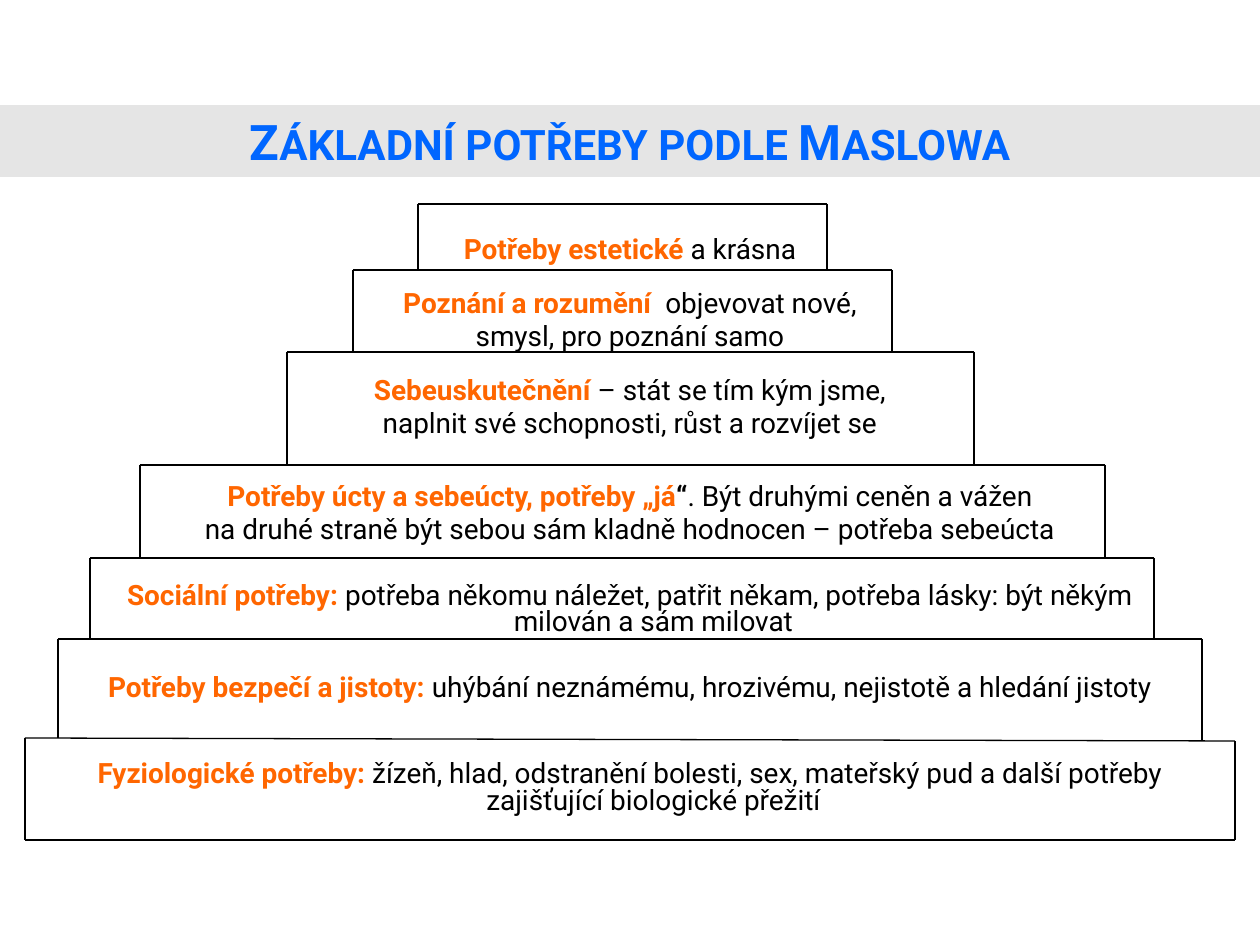
from dataclasses import dataclass

from lxml import etree
from pptx import Presentation
from pptx.dml.color import RGBColor
from pptx.enum.shapes import MSO_CONNECTOR, MSO_SHAPE
from pptx.enum.text import MSO_ANCHOR, PP_ALIGN
from pptx.oxml.ns import qn
from pptx.util import Pt

STRAIGHT = MSO_CONNECTOR.STRAIGHT
RECTANGLE = MSO_SHAPE.RECTANGLE
MIDDLE = MSO_ANCHOR.MIDDLE
TOP = MSO_ANCHOR.TOP
CENTER = PP_ALIGN.CENTER
EMU_PER_PX = 914400 / 126


@dataclass(frozen=True)
class Theme:
    font: str = "Roboto"
    ink: str = "000000"
    need: str = "FF6600"
    title: str = "0066FF"
    band: str = "E5E5E5"
    body_size: int = 16
    capital_size: int = 28
    small_capital_size: int = 24
    line_width: float = 0.75
    line_spacing: float = 0.8
    row_gap: float = 3.5


@dataclass(frozen=True)
class Span:
    text: str
    color: str
    size: int
    bold: bool = False


@dataclass(frozen=True)
class Step:
    """One step of the pyramid: its top edge, text rows and the gap above them in points."""
    left: int
    right: int
    top_left: int
    top_right: int
    gap: float
    rows: list[list[Span]]


THEME = Theme()


def px(length: int) -> int:
    return round(length * EMU_PER_PX)


def need(text: str) -> Span:
    return Span(text, THEME.need, THEME.body_size, True)


def plain(text: str, bold: bool = False) -> Span:
    return Span(text, THEME.ink, THEME.body_size, bold)


def title_span(text: str, size: int) -> Span:
    return Span(text, THEME.title, size, True)


TITLE = [
    title_span("Z", THEME.capital_size),
    title_span("ÁKLADNÍ POTŘEBY PODLE ", THEME.small_capital_size),
    title_span("M", THEME.capital_size),
    title_span("ASLOWA", THEME.small_capital_size),
]
BASE = 840
STEPS = [
    Step(418, 827, 204, 204, 0, [[need("Potřeby estetické "), plain("a krásna")]]),
    Step(353, 892, 270, 270, 15.5, [
        [need("Poznání a rozumění "), plain(" objevovat nové,")],
        [plain("smysl, pro poznání samo")],
    ]),
    Step(287, 974, 352, 352, 15.5, [
        [need("Sebeuskutečnění "), plain("– stát se tím kým jsme,")],
        [plain("naplnit své schopnosti, růst a rozvíjet se")],
    ]),
    Step(140, 1105, 465, 465, 26.5, [
        [need("Potřeby úcty a sebeúcty, potřeby „já"), plain("“", True),
         plain(". Být druhými ceněn a vážen")],
        [plain("na druhé straně být sebou sám kladně hodnocen – potřeba sebeúcta")],
    ]),
    Step(90, 1154, 558, 558, 22, [
        [need("Sociální potřeby: "),
         plain("potřeba někomu náležet, patřit někam, potřeba lásky: "
               "být někým milován a sám milovat")],
    ]),
    Step(58, 1202, 639, 639, 22, [
        [need("Potřeby bezpečí a jistoty: "),
         plain("uhýbání neznámému, hrozivému, nejistotě a hledání jistoty")],
    ]),
    Step(25, 1235, 738, 741, 34, [
        [need("Fyziologické potřeby: "),
         plain("žízeň, hlad, odstranění bolesti, sex, mateřský pud a další potřeby "
               "zajišťující biologické přežití")],
    ]),
]


def set_values(target, values: dict) -> None:
    for name, value in values.items():
        setattr(target, name, value)


def write_spans(para, spans: list[Span]) -> None:
    for span in spans:
        run = para.add_run()
        run.text = span.text
        set_values(run.font, {"name": THEME.font, "size": Pt(span.size), "bold": span.bold})
        run.font.color.rgb = RGBColor.from_string(span.color)


def add_title(page) -> None:
    band = page.shapes.add_shape(RECTANGLE, 0, px(105), px(1260), px(72))
    band.shadow.inherit = False
    band.fill.solid()
    band.fill.fore_color.rgb = RGBColor.from_string(THEME.band)
    band.line.fill.background()
    set_values(band.text_frame, {"word_wrap": True, "vertical_anchor": MIDDLE})
    para = band.text_frame.paragraphs[0]
    para.alignment = CENTER
    write_spans(para, TITLE)


def add_needs(page) -> None:
    box = page.shapes.add_textbox(px(63), px(204), px(1134), px(728))
    frame = box.text_frame
    set_values(frame, {"word_wrap": True, "vertical_anchor": TOP, "margin_top": px(34)})
    para = frame.paragraphs[0]
    for step in STEPS:
        for index, spans in enumerate(step.rows):
            if para.runs:
                para = frame.add_paragraph()
            gap = THEME.row_gap if index else step.gap
            set_values(para, {"alignment": CENTER, "line_spacing": THEME.line_spacing,
                              "space_before": Pt(gap)})
            # Hanging indent for wrapped lines
            properties = para._p.get_or_add_pPr()
            properties.set("marL", str(px(47)))
            properties.set("indent", str(-px(47)))
            write_spans(para, spans)


def add_line(page, x1: int, y1: int, x2: int, y2: int) -> None:
    line = page.shapes.add_connector(STRAIGHT, px(x1), px(y1), px(x2), px(y2))
    line.line.width = Pt(THEME.line_width)
    line.line.color.rgb = RGBColor.from_string(THEME.ink)
    etree.SubElement(line._element.spPr, qn("a:effectLst"))


def add_pyramid(page) -> None:
    floors = [(step.top_left, step.top_right) for step in STEPS[1:]] + [(BASE, BASE)]
    for step, (floor_left, floor_right) in zip(STEPS, floors):
        add_line(page, step.left, step.top_left, step.right, step.top_right)
        add_line(page, step.left, step.top_left, step.left, floor_left)
        add_line(page, step.right, step.top_right, step.right, floor_right)
    add_line(page, STEPS[-1].left, BASE, STEPS[-1].right, BASE)


def main() -> None:
    deck = Presentation()
    set_values(deck, {"slide_width": px(1260), "slide_height": px(945)})
    page = deck.slides.add_slide(deck.slide_layouts[6])
    add_needs(page)
    add_title(page)
    add_pyramid(page)
    deck.save("out.pptx")


if __name__ == "__main__":
    main()
